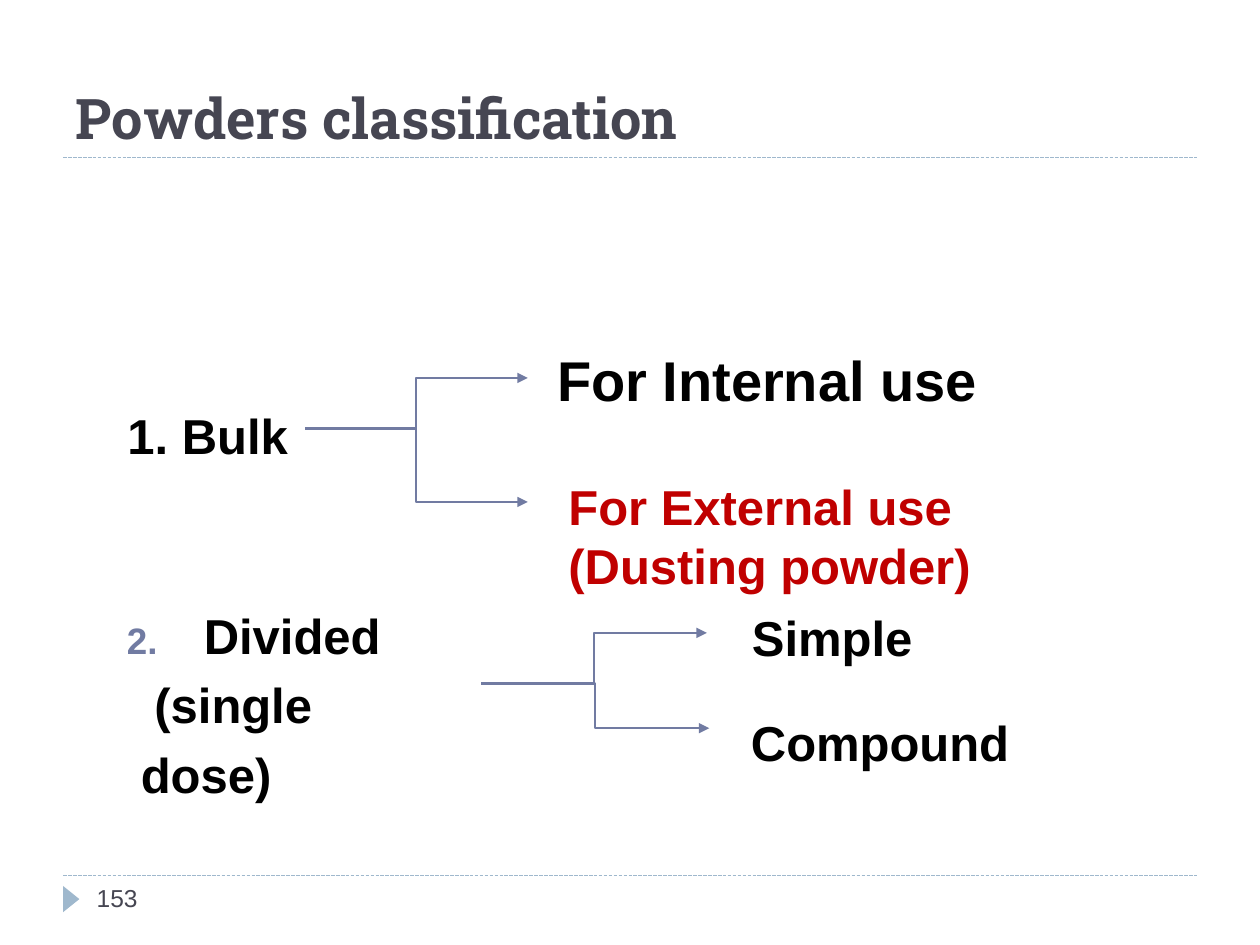
from lxml import etree
from pptx import Presentation
from pptx.dml.color import RGBColor
from pptx.enum.dml import MSO_LINE
from pptx.enum.shapes import MSO_CONNECTOR, MSO_SHAPE
from pptx.oxml.ns import qn
from pptx.util import Cm, Pt

SLATE = RGBColor(0x46, 0x46, 0x52)
PALE_BLUE = RGBColor(0x9F, 0xB8, 0xCD)
VIOLET = RGBColor(0x71, 0x7B, 0xA2)
RED = RGBColor(0xC0, 0x00, 0x00)
BLACK = RGBColor(0x00, 0x00, 0x00)

presentation = Presentation()
presentation.slide_width = Cm(25.4)
presentation.slide_height = Cm(19.05)
slide = presentation.slides.add_slide(presentation.slide_layouts[6])


def add_text(frame, text, size=28, color=BLACK, font="Arial", bold=True,
             margin=0.03, indent=0, line=None, before=None, new=False):
    """Add a run to the last paragraph, or to a new one; margin and indent are in cm."""
    paragraph = frame.add_paragraph() if new else frame.paragraphs[-1]
    properties = paragraph._p.get_or_add_pPr()
    properties.set("marL", str(Cm(margin)))
    properties.set("indent", str(Cm(indent)))
    if line is not None:
        paragraph.line_spacing = line
    if before is not None:
        paragraph.space_before = Pt(before)
    for number, part in enumerate(text.split("\n")):
        if number:
            paragraph.add_line_break()
        run = paragraph.add_run()
        run.text = part
        run.font.size = Pt(size)
        run.font.name = font
        run.font.bold = bold
        run.font.color.rgb = color


def add_line(kind, start, end, color, width):
    connector = slide.shapes.add_connector(
        kind, Cm(start[0]), Cm(start[1]), Cm(end[0]), Cm(end[1]))
    connector.line.color.rgb = color
    connector.line.width = Pt(width)
    etree.SubElement(connector._element.spPr, qn("a:effectLst"))
    return connector


# Dashed rules and page marker
for y in (3.18, 17.65):
    rule = add_line(MSO_CONNECTOR.STRAIGHT, (1.27, y), (24.13, y), PALE_BLUE, 0.72)
    rule.line.dash_style = MSO_LINE.SQUARE_DOT

marker = slide.shapes.add_shape(
    MSO_SHAPE.ISOSCELES_TRIANGLE, Cm(1.17), Cm(17.96), Cm(0.53), Cm(0.33))
marker.rotation = 90
marker.shadow.inherit = False
marker.fill.solid()
marker.fill.fore_color.rgb = PALE_BLUE
marker.line.fill.background()

# Forked arrows from each class to its kinds
forks = [
    ((6.15, 8.64), [(10.64, 7.62), (10.64, 10.12)]),
    ((9.7, 13.78), [(14.25, 12.76), (14.3, 14.68)]),
]
for start, ends in forks:
    for end in ends:
        arrow = add_line(MSO_CONNECTOR.ELBOW, start, end, VIOLET, 1.25)
        etree.SubElement(arrow.line._get_or_add_ln(), qn("a:tailEnd"), type="triangle")

# Text boxes: left, top, width, height in cm
boxes = {
    "title": (1.5, 1.65, 13.1, 1.42),
    "bulk": (2.54, 7.09, 17.2, 2.31),
    "divided": (2.54, 11.96, 6.43, 2.87),
    "external": (11.43, 9.58, 8.18, 3.89),
    "compound": (15.11, 14.33, 5.28, 1.24),
    "page": (1.85, 17.78, 1.04, 0.64),
}
frames = {}
for name, position in boxes.items():
    frame = slide.shapes.add_textbox(*[Cm(value) for value in position]).text_frame
    frame.word_wrap = True
    frame.margin_left = frame.margin_right = frame.margin_bottom = 0
    frame.margin_top = Cm(0.03)
    frames[name] = frame

add_text(frames["title"], "Powders classification", size=32, color=SLATE,
         font="Roboto Slab")
add_text(frames["bulk"], "For Internal use", size=32, margin=8.69, line=Pt(34.2))
add_text(frames["bulk"], "1. Bulk", line=Pt(29.4), new=True)

hanging = {"margin": 0.3, "indent": -0.28, "line": 1.18}
add_text(frames["divided"], "2.\t", size=21, color=VIOLET, **hanging)
add_text(frames["divided"], "Divided\n (single\ndose)", **hanging)

add_text(frames["external"], "For External use\n(Dusting powder)", color=RED)
add_text(frames["external"], "Simple", margin=3.73, before=7.6, new=True)
add_text(frames["compound"], "Compound")
add_text(frames["page"], "153", size=14, color=SLATE, bold=False, margin=0.1,
         line=Pt(16.5))

presentation.save("out.pptx")
